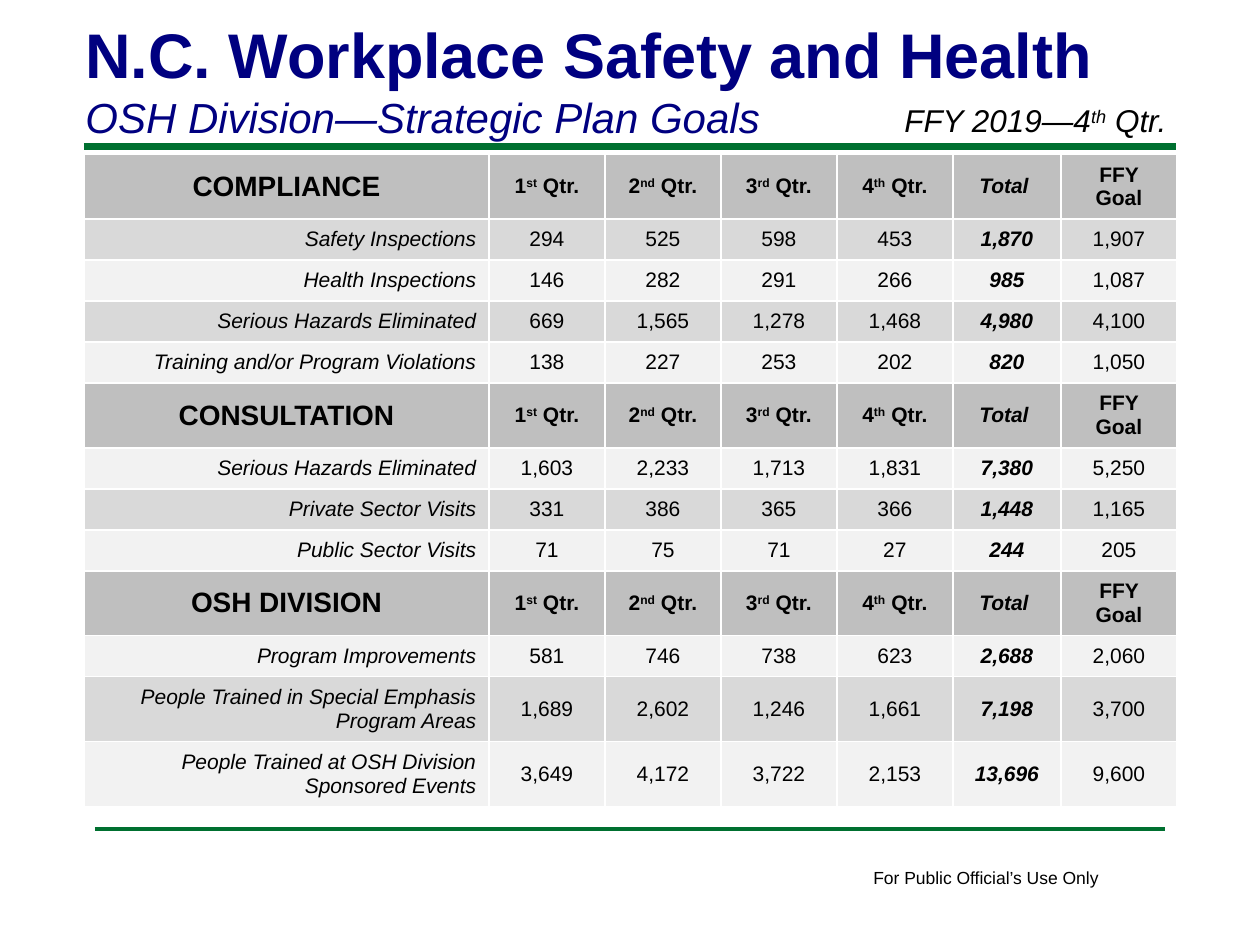
"""Build the workplace safety strategic plan goals slide."""
from dataclasses import dataclass

from lxml.etree import SubElement
from pptx import Presentation
from pptx.dml.color import RGBColor
from pptx.enum.shapes import MSO_CONNECTOR
from pptx.enum.text import MSO_ANCHOR, PP_ALIGN
from pptx.oxml.ns import qn
from pptx.util import Emu, Pt

SCALE = 914400 // 126


@dataclass(frozen=True)
class Theme:
    font: str = "Arial"
    ink: str = "000000"
    navy: str = "000080"
    green: str = "007030"
    border: str = "FFFFFF"
    header: str = "BFBFBF"
    odd_row: str = "D9D9D9"
    even_row: str = "F2F2F2"
    title: int = 36
    subtitle: int = 24
    quarter: int = 18
    section: int = 16
    body: int = 12
    footer: int = 10


def px(length):
    return Emu(length * SCALE)


class SlideBuilder:
    def __init__(self, slide, theme):
        self.slide = slide
        self.theme = theme

    def rule(self, left, right, y, weight):
        line = self.slide.shapes.add_connector(
            MSO_CONNECTOR.STRAIGHT, px(left), px(y), px(right), px(y))
        line.line.color.rgb = RGBColor.from_string(self.theme.green)
        line.line.width = Pt(weight)
        SubElement(line._element.spPr, qn("a:effectLst"))

    def fill_paragraph(self, paragraph, text, size, color=None, bold=False,
                       italic=False, align=PP_ALIGN.LEFT):
        """Fill a paragraph, raising the parts held between carets."""
        paragraph.alignment = align
        font = paragraph.font
        font.name = self.theme.font
        font.size = Pt(size)
        font.bold = bold
        font.italic = italic
        font.color.rgb = RGBColor.from_string(color or self.theme.ink)
        for position, part in enumerate(text.split("^")):
            run = paragraph.add_run()
            run.text = part
            if position % 2:
                run._r.get_or_add_rPr().set("baseline", "30000")

    def text(self, left, top, width, height, lines, wrap=True, anchor=MSO_ANCHOR.TOP):
        box = self.slide.shapes.add_textbox(px(left), px(top), px(width), px(height))
        frame = box.text_frame
        frame.word_wrap = wrap
        frame.vertical_anchor = anchor
        for number, line in enumerate(lines):
            paragraph = frame.add_paragraph() if number else frame.paragraphs[0]
            self.fill_paragraph(paragraph, **line)

    def cell(self, cell, fill, text, **style):
        properties = cell._tc.get_or_add_tcPr()
        for side in ("a:lnL", "a:lnR", "a:lnT", "a:lnB"):
            edge = SubElement(properties, qn(side), w=str(Pt(1)))
            SubElement(SubElement(edge, qn("a:solidFill")), qn("a:srgbClr"),
                       val=self.theme.border)
        cell.fill.solid()
        cell.fill.fore_color.rgb = RGBColor.from_string(fill)
        cell.vertical_anchor = MSO_ANCHOR.MIDDLE
        self.fill_paragraph(cell.text_frame.paragraphs[0], text, **style)

    def goals_table(self, left, top, widths, sections, short, tall, long_label):
        theme = self.theme
        rows = []
        for name, goals in sections.items():
            rows.append((True, (name, *HEADINGS)))
            rows += [(False, goal) for goal in goals]
        heights = [tall if heading or len(values[0]) > long_label else short
                   for heading, values in rows]
        table = self.slide.shapes.add_table(
            len(rows), len(widths), px(left), px(top),
            px(sum(widths)), px(sum(heights))).table
        table.first_row = False
        table.horz_banding = False
        for column, width in zip(table.columns, widths):
            column.width = px(width)
        total = HEADINGS.index("Total ") + 1
        for r, (heading, values) in enumerate(rows):
            table.rows[r].height = px(heights[r])
            stripe = theme.odd_row if r % 2 else theme.even_row
            for c, value in enumerate(values):
                is_label = c == 0
                self.cell(
                    table.cell(r, c), theme.header if heading else stripe, value,
                    size=theme.section if heading and is_label else theme.body,
                    bold=heading or c == total,
                    italic=c == total or (is_label and not heading),
                    align=PP_ALIGN.RIGHT if is_label and not heading else PP_ALIGN.CENTER)


HEADINGS = ("1^st^ Qtr.", "2^nd^ Qtr.", "3^rd^ Qtr.", "4^th^ Qtr.", "Total ", "FFY Goal")
SECTIONS = {
    "COMPLIANCE": [
        ("Safety Inspections", "294", "525", "598", "453", "1,870", "1,907"),
        ("Health Inspections", "146", "282", "291", "266", "985", "1,087"),
        ("Serious Hazards Eliminated", "669", "1,565", "1,278", "1,468", "4,980", "4,100"),
        ("Training and/or Program Violations", "138", "227", "253", "202", "820", "1,050"),
    ],
    "CONSULTATION": [
        ("Serious Hazards Eliminated", "1,603", "2,233", "1,713", "1,831", "7,380", "5,250"),
        ("Private Sector Visits", "331", "386", "365", "366", "1,448", "1,165"),
        ("Public Sector Visits", "71", "75", "71", "27", "244", "205"),
    ],
    "OSH DIVISION": [
        ("Program Improvements", "581", "746", "738", "623", "2,688", "2,060"),
        ("People Trained in Special Emphasis Program Areas",
         "1,689", "2,602", "1,246", "1,661", "7,198", "3,700"),
        ("People Trained at OSH Division Sponsored Events",
         "3,649", "4,172", "3,722", "2,153", "13,696", "9,600"),
    ],
}


def main():
    theme = Theme()
    deck = Presentation()
    deck.slide_width = px(1260)
    deck.slide_height = px(945)
    builder = SlideBuilder(deck.slides.add_slide(deck.slide_layouts[6]), theme)

    builder.rule(84, 1176, 147, weight=4)
    builder.rule(95, 1165, 829, weight=2)
    builder.text(861, 861, 253, 34, [
        dict(text="For Public Official’s Use Only", size=theme.footer)], wrap=False)
    builder.text(73, 8, 1040, 140, [
        dict(text="N.C. Workplace Safety and Health", size=theme.title,
             color=theme.navy, bold=True),
        dict(text="OSH Division—Strategic Plan Goals", size=theme.subtitle,
             color=theme.navy, italic=True)], anchor=MSO_ANCHOR.BOTTOM)
    builder.goals_table(84, 154, [405, *[116] * 4, 108, 116], SECTIONS,
                        short=41, tall=65, long_label=40)
    builder.text(892, 95, 315, 50, [
        dict(text="FFY 2019—4^th^ Qtr.", size=theme.quarter, italic=True)])

    deck.save("out.pptx")


if __name__ == "__main__":
    main()
